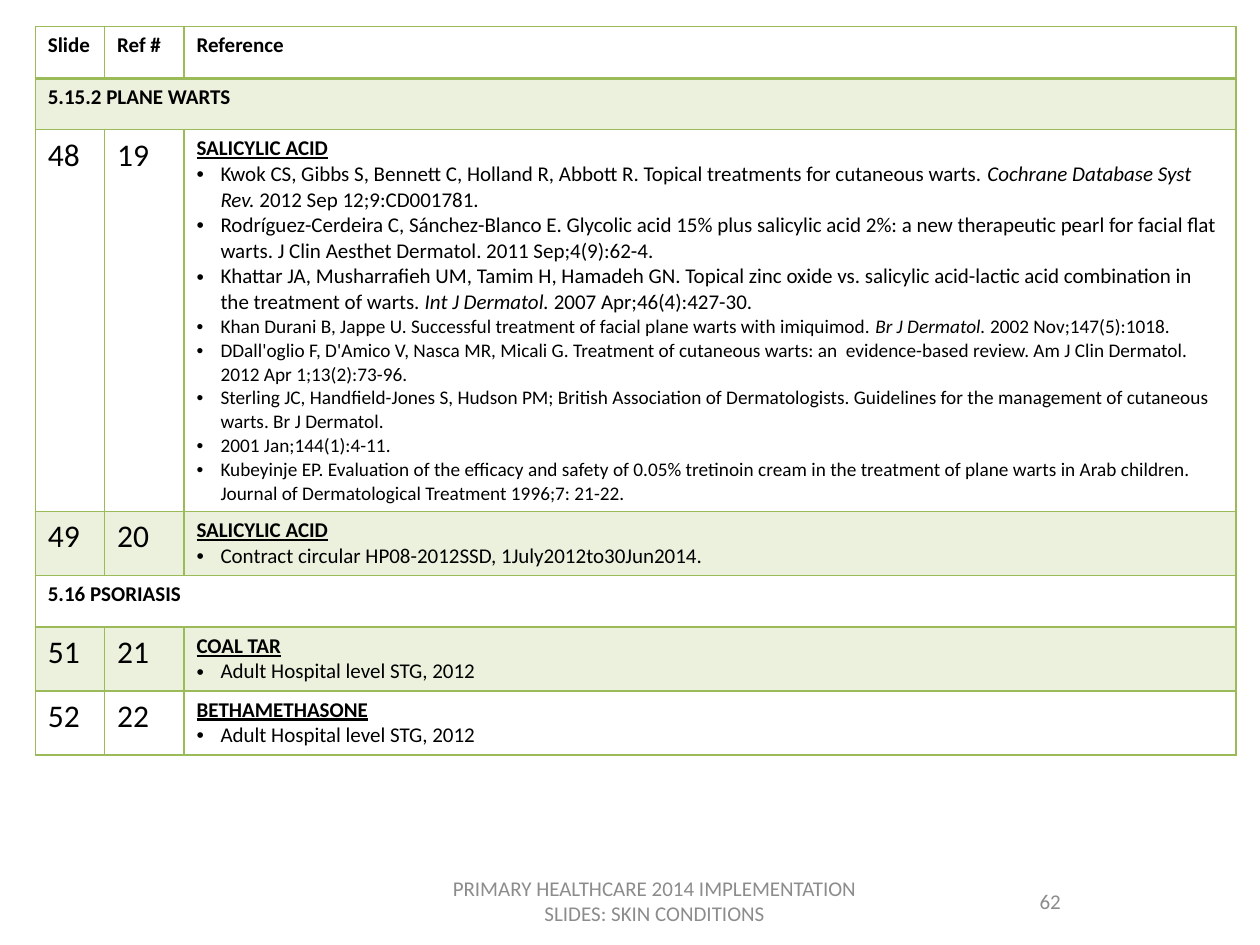
"""Builds the reference table slide for plane warts and psoriasis."""
from lxml import etree
from pptx import Presentation
from pptx.dml.color import RGBColor
from pptx.enum.text import MSO_ANCHOR, PP_ALIGN
from pptx.oxml.ns import qn
from pptx.util import Inches, Pt

CENTER = PP_ALIGN.CENTER
MIDDLE = MSO_ANCHOR.MIDDLE
FONT = "Calibri"
GREEN = RGBColor(0x9B, 0xBB, 0x59)
BLACK = RGBColor(0x00, 0x00, 0x00)
GRAY = RGBColor(0x8C, 0x8C, 0x8C)

HEADERS = ("Slide", "Ref #", "Reference")
COLUMN_WIDTHS = (0.55, 0.63, 8.35)
ROW_HEIGHT = 0.41
TABLE_LEFT, TABLE_TOP = 0.28, 0.21
BULLET_INDENT = 0.19

# Bullets are (size, segments); every second segment is italic.
WART_REFERENCES = [
    (12, ("Kwok CS, Gibbs S, Bennett C, Holland R, Abbott R. Topical treatments for cutaneous warts. ",
          "Cochrane Database Syst Rev. ", "2012 Sep 12;9:CD001781.")),
    (12, ("Rodríguez-Cerdeira C, Sánchez-Blanco E. Glycolic acid 15% plus salicylic acid 2%: a new "
          "therapeutic pearl for facial flat warts. J Clin Aesthet Dermatol. 2011 Sep;4(9):62-4.",)),
    (12, ("Khattar JA, Musharrafieh UM, Tamim H, Hamadeh GN. Topical zinc oxide vs. salicylic "
          "acid-lactic acid combination in the treatment of warts. ",
          "Int J Dermatol.", " 2007 Apr;46(4):427-30.")),
    (11, ("Khan Durani B, Jappe U. Successful treatment of facial plane warts with imiquimod. ",
          "Br J Dermatol.", " 2002 Nov;147(5):1018.")),
    (11, ("DDall'oglio F, D'Amico V, Nasca MR, Micali G. Treatment of cutaneous warts: an  "
          "evidence-based review. Am J Clin Dermatol. 2012 Apr 1;13(2):73-96.",)),
    (11, ("Sterling JC, Handfield-Jones S, Hudson PM; British Association of Dermatologists. "
          "Guidelines for the management of cutaneous warts. Br J Dermatol.",)),
    (11, ("2001 Jan;144(1):4-11.",)),
    (11, ("Kubeyinje EP. Evaluation of the efficacy and safety of 0.05% tretinoin cream in the treatment "
          "of plane warts in Arab children. Journal of Dermatological Treatment 1996;7: 21-22.",)),
]
HOSPITAL_REFERENCE = [(12, ("Adult Hospital level STG, 2012",))]
BODY_ROWS = [
    ("5.15.2 PLANE WARTS",),
    ("48", "19", "SALICYLIC ACID", WART_REFERENCES),
    ("49", "20", "SALICYLIC ACID",
     [(12, ("Contract circular HP08-2012SSD, 1July2012to30Jun2014.",))]),
    ("5.16 PSORIASIS",),
    ("51", "21", "COAL TAR", HOSPITAL_REFERENCE),
    ("52", "22", "BETHAMETHASONE", HOSPITAL_REFERENCE),
]
FOOTERS = [
    (3.42, 3.55, "PRIMARY HEALTHCARE 2014 IMPLEMENTATION SLIDES: SKIN CONDITIONS"),
    (7.17, 2.33, "62"),
]


def add_span(para, text, size, color=BLACK, bold=False, italic=False, underline=False):
    span = para.add_run()
    span.text = text
    font = span.font
    font.name, font.size, font.bold, font.italic = FONT, Pt(size), bold, italic
    font.underline = underline
    font.color.rgb = color


def add_bullet(cell, size, segments):
    para = cell.text_frame.add_paragraph()
    properties = para._p.get_or_add_pPr()
    properties.set("marL", str(Inches(BULLET_INDENT)))
    properties.set("indent", str(-Inches(BULLET_INDENT)))
    etree.SubElement(properties, qn("a:buFont"), typeface="Arial")
    etree.SubElement(properties, qn("a:buChar"), char="•")
    for index, text in enumerate(segments):
        add_span(para, text, size, italic=index % 2 == 1)


def style_cell(cell, row):
    properties = cell._tc.get_or_add_tcPr()
    widths = {"L": 1, "R": 1, "T": 2 if row == 1 else 1, "B": 2 if row == 0 else 1}
    for side, width in widths.items():
        line = etree.SubElement(properties, qn(f"a:ln{side}"), w=str(Pt(width)))
        fill = etree.SubElement(line, qn("a:solidFill"))
        etree.SubElement(fill, qn("a:srgbClr"), val=str(GREEN))
    if row % 2:
        cell.fill.solid()
        cell.fill.fore_color.rgb = GREEN
        tint = properties.find(qn("a:solidFill")).find(qn("a:srgbClr"))
        etree.SubElement(tint, qn("a:alpha"), val="20000")
    else:
        cell.fill.background()


def fill_row(table, row, content):
    if len(content) == 1:
        table.cell(row, 0).merge(table.cell(row, len(HEADERS) - 1))
        add_span(table.cell(row, 0).text_frame.paragraphs[0], content[0], 12, bold=True)
        return
    *numbers, heading, bullets = content
    for column, number in enumerate(numbers):
        add_span(table.cell(row, column).text_frame.paragraphs[0], number, 18)
    cell = table.cell(row, len(numbers))
    add_span(cell.text_frame.paragraphs[0], heading, 12, bold=True, underline=True)
    for size, segments in bullets:
        add_bullet(cell, size, segments)


def add_reference_table(page):
    row_count = len(BODY_ROWS) + 1
    table = page.shapes.add_table(
        row_count, len(HEADERS), Inches(TABLE_LEFT), Inches(TABLE_TOP),
        Inches(sum(COLUMN_WIDTHS)), Inches(ROW_HEIGHT * row_count)).table
    table.first_row = table.horz_banding = False
    for column, width in zip(table.columns, COLUMN_WIDTHS):
        column.width = Inches(width)
    for row in range(row_count):
        table.rows[row].height = Inches(ROW_HEIGHT)
        for column in range(len(HEADERS)):
            style_cell(table.cell(row, column), row)
    for column, header in enumerate(HEADERS):
        add_span(table.cell(0, column).text_frame.paragraphs[0], header, 12, bold=True)
    for row, content in enumerate(BODY_ROWS, start=1):
        fill_row(table, row, content)


def add_footer(page, left, width, text):
    box = page.shapes.add_textbox(Inches(left), Inches(6.95), Inches(width), Inches(0.4))
    frame = box.text_frame
    frame.word_wrap = True
    frame.vertical_anchor = MIDDLE
    para = frame.paragraphs[0]
    para.alignment = CENTER
    add_span(para, text, 12, GRAY)


def main():
    deck = Presentation()
    deck.slide_width, deck.slide_height = Inches(10), Inches(7.5)
    page = deck.slides.add_slide(deck.slide_layouts[6])
    add_reference_table(page)
    for left, width, text in FOOTERS:
        add_footer(page, left, width, text)
    deck.save("out.pptx")


if __name__ == "__main__":
    main()
